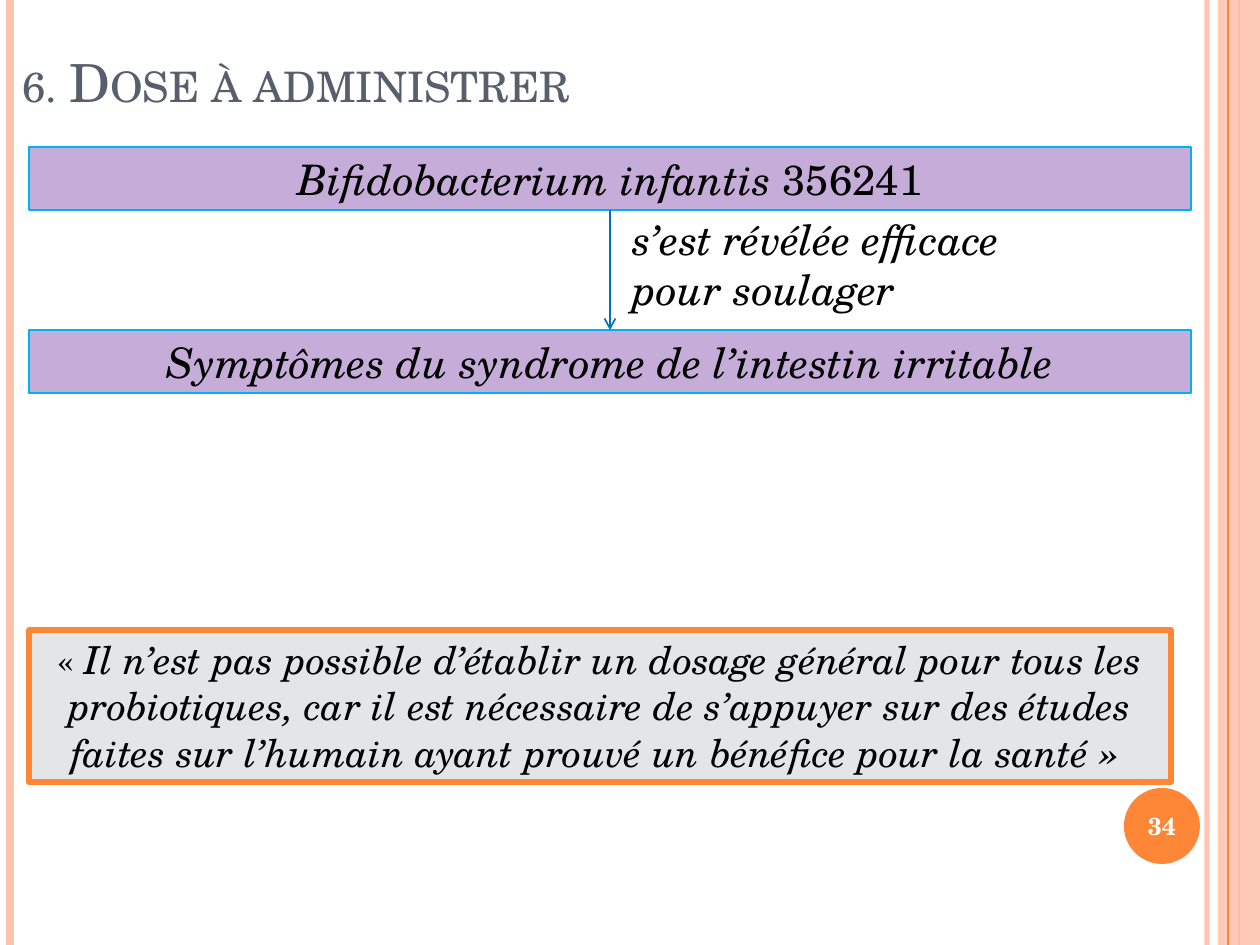
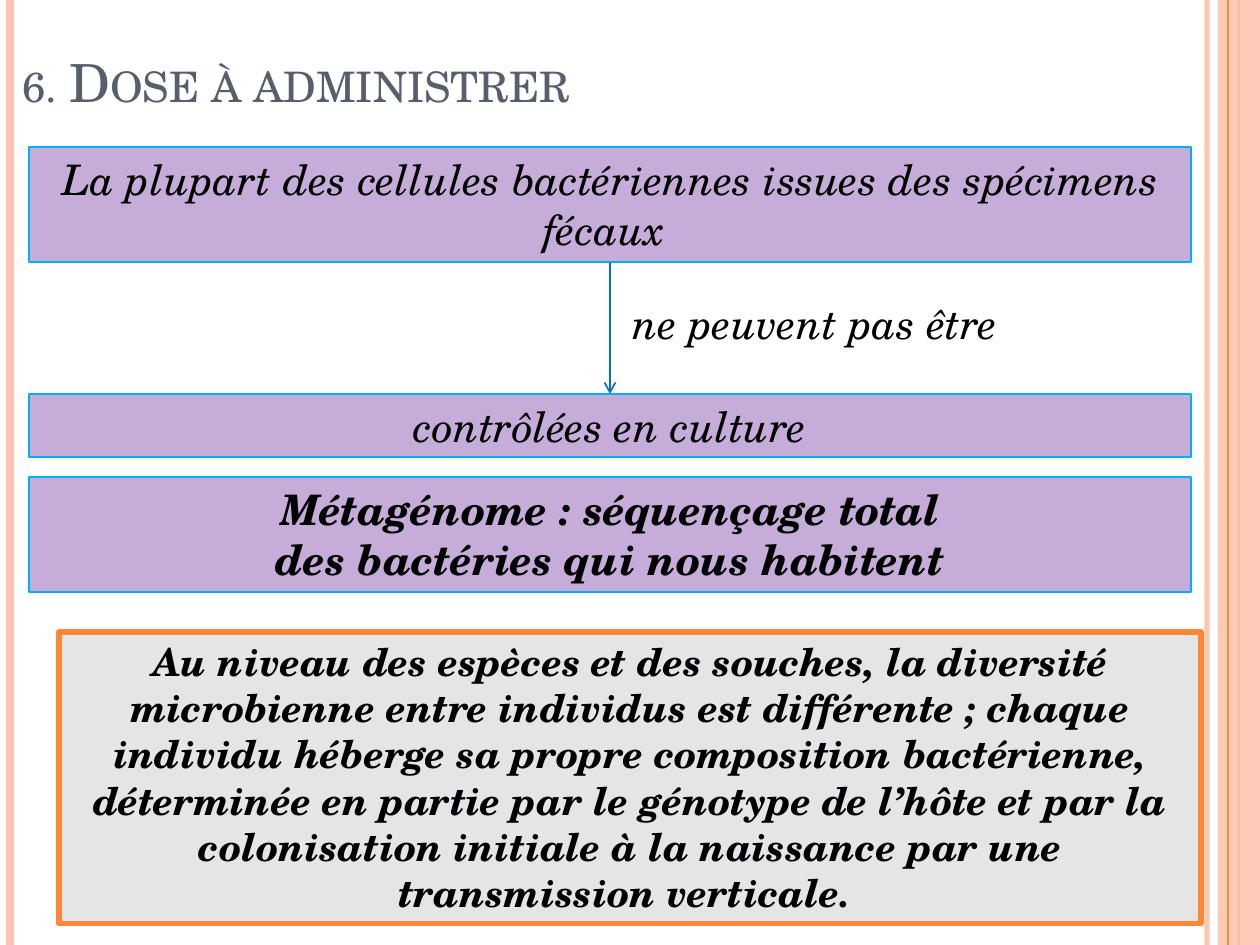
from lxml import etree
from pptx import Presentation
from pptx.dml.color import RGBColor
from pptx.enum.shapes import MSO_CONNECTOR, MSO_SHAPE
from pptx.enum.text import MSO_ANCHOR, MSO_AUTO_SIZE, PP_ALIGN
from pptx.oxml.ns import qn
from pptx.util import Emu, Pt

STRAIGHT = MSO_CONNECTOR.STRAIGHT
RECTANGLE, OVAL = MSO_SHAPE.RECTANGLE, MSO_SHAPE.OVAL
TOP, MIDDLE, BOTTOM = MSO_ANCHOR.TOP, MSO_ANCHOR.MIDDLE, MSO_ANCHOR.BOTTOM
LEFT, CENTER = PP_ALIGN.LEFT, PP_ALIGN.CENTER
GROW, FIXED = MSO_AUTO_SIZE.SHAPE_TO_FIT_TEXT, MSO_AUTO_SIZE.NONE

PX = 914400 / 126
WIDTH, HEIGHT = 1260, 945
FONT = "TeX Gyre Schola"
TITLE = "6. Dose à administrer"
COLORS = {
    "orange": "FE8637", "peach": "FEC3AE", "slate": "575F6D", "purple": "7030A0",
    "cyan": "00B0F0", "blue": "0070C0", "gray": "E4E5E6", "black": "000000",
    "white": "FFFFFF",
}
RULES = [(1207, "peach", 3, 93), (10, "peach", 4.5, 100), (1239, "orange", 1.5, 100)]
ONE_LINE, TWO_LINES = 63, 115
BAND_LEFT, BAND_WIDTH = 29, 1162
LABEL_LEFT, LABEL_WIDTH = 620, 433
QUOTE_WIDTH = 1142


def px(*lengths):
    """Turn pixel lengths into EMU."""
    return [Emu(round(length * PX)) for length in lengths]


def color(name):
    """Look up a palette colour."""
    return RGBColor.from_string(COLORS[name])


def set_opacity(shape, percent):
    """Make the first colour of a shape translucent."""
    node = next(shape.element.iter(qn("a:srgbClr")))
    etree.SubElement(node, qn("a:alpha")).set("val", str(percent * 1000))


def write(shape, paragraphs, size, ink="black", align=CENTER, anchor=TOP, fit=GROW):
    """Fill a shape with paragraphs of (text, style) runs; style holds b and i."""
    frame = shape.text_frame
    frame.word_wrap = True
    frame.auto_size = fit
    frame.vertical_anchor = anchor
    for index, runs in enumerate(paragraphs):
        paragraph = frame.add_paragraph() if index else frame.paragraphs[0]
        paragraph.alignment = align
        for text, style in runs:
            run = paragraph.add_run()
            run.text = text
            run.font.name = FONT
            run.font.size = Pt(size)
            run.font.color.rgb = color(ink)
            run.font.bold = "b" in style
            run.font.italic = "i" in style


def add_filled(slide, kind, box, fill, line=None, weight=0.75):
    """Add a flat filled shape, outlined when a line colour is given."""
    shape = slide.shapes.add_shape(kind, *px(*box))
    shape.shadow.inherit = False
    shape.fill.solid()
    shape.fill.fore_color.rgb = color(fill)
    if line:
        shape.line.color.rgb = color(line)
        shape.line.width = Pt(weight)
    else:
        shape.line.fill.background()
    return shape


def add_line(slide, start, end, ink, weight):
    """Add a flat straight connector."""
    connector = slide.shapes.add_connector(STRAIGHT, *px(*start, *end))
    connector.line.color.rgb = color(ink)
    connector.line.width = Pt(weight)
    etree.SubElement(connector.element.find(qn("p:spPr")), qn("a:effectLst"))
    return connector


def add_rule(slide, x, ink, weight, opacity=100):
    """Add a rule over the full slide height."""
    rule = add_line(slide, (x, 0), (x, HEIGHT), ink, weight)
    if opacity < 100:
        set_opacity(rule, opacity)


def add_frame(slide):
    """Draw the side rules, the right band and the page disc."""
    for rule in RULES:
        add_rule(slide, *rule)
    band = add_filled(slide, RECTANGLE, (1218, 0, WIDTH - 1218, HEIGHT), "peach")
    set_opacity(band, 87)
    add_rule(slide, 1228, "orange", 0.75)
    add_filled(slide, OVAL, (1124, 788, 76, 76), "orange")


def add_title(slide):
    """Place the small-caps title in its placeholder."""
    title = slide.shapes.title
    title.left, title.top, title.width, title.height = px(10, -39, 1029, 158)
    write(title, [[(TITLE, "")]], 30, "slate", LEFT, BOTTOM, FIXED)
    for properties in title.element.iter(qn("a:rPr")):
        properties.set("cap", "small")


def add_band(slide, top, height, paragraphs):
    """Add a purple statement band."""
    band = add_filled(slide, RECTANGLE, (BAND_LEFT, top, BAND_WIDTH, height),
                      "purple", "cyan")
    set_opacity(band, 40)
    write(band, paragraphs, 24)
    return band


def add_arrow(slide, upper, lower):
    """Join two bands with a downward arrow."""
    arrow = add_line(slide, (0, 0), (0, 0), "blue", 1)
    arrow.begin_connect(upper, 2)
    arrow.end_connect(lower, 0)
    outline = arrow.element.find(qn("p:spPr")).find(qn("a:ln"))
    etree.SubElement(outline, qn("a:tailEnd")).set("type", "arrow")


def add_label(slide, top, height, text):
    """Add the wording beside an arrow."""
    label = slide.shapes.add_textbox(*px(LABEL_LEFT, top, LABEL_WIDTH, height))
    write(label, [[(text, "i")]], 24, align=LEFT)


def add_quote(slide, left, top, height, runs):
    """Add the gray conclusion box."""
    quote = add_filled(slide, RECTANGLE, (left, top, QUOTE_WIDTH, height),
                       "gray", "orange", 3)
    write(quote, [runs], 22)


def add_page_number(slide, number):
    """Write the page number over the disc."""
    box = slide.shapes.add_textbox(*px(1120, 790, 84, 72))
    write(box, [[(number, "b")]], 14, "white", anchor=MIDDLE, fit=FIXED)


def start_slide(presentation):
    """Add a slide with the shared frame and title."""
    slide = presentation.slides.add_slide(presentation.slide_layouts[5])
    add_frame(slide)
    add_title(slide)
    return slide


def build_strain_slide(presentation):
    """Build the slide on the effective strain."""
    slide = start_slide(presentation)
    strain = add_band(slide, 147, ONE_LINE,
                      [[("Bifidobacterium infantis ", "i"), ("356241", "")]])
    symptoms = add_band(slide, 330, ONE_LINE,
                        [[("Symptômes du syndrome de l’intestin irritable", "i")]])
    add_arrow(slide, strain, symptoms)
    add_label(slide, 207, TWO_LINES, "s’est révélée efficace pour soulager")
    add_quote(slide, 29, 630, 152, [
        ("« ", ""),
        ("Il n’est pas possible d’établir un dosage général pour tous les "
         "probiotiques, car il est nécessaire de s’appuyer sur des études faites "
         "sur l’humain ayant prouvé un bénéfice pour la santé ", "i"),
        ("» ", "bi"),
    ])
    add_page_number(slide, "34")


def build_metagenome_slide(presentation):
    """Build the slide on the metagenome."""
    slide = start_slide(presentation)
    cells = add_band(slide, 147, TWO_LINES, [[
        ("La plupart des cellules bactériennes issues des spécimens fécaux ", "i")]])
    culture = add_band(slide, 394, ONE_LINE, [[("contrôlées en culture", "i")]])
    add_arrow(slide, cells, culture)
    add_label(slide, 291, ONE_LINE, "ne peuvent pas être")
    add_band(slide, 477, TWO_LINES, [[("Métagénome : séquençage total", "bi")],
                                     [("des bactéries qui nous habitent", "bi")]])
    add_quote(slide, 59, 632, 292, [
        ("Au niveau des espèces et des souches, la diversité microbienne entre "
         "individus est différente ; chaque individu héberge sa propre composition "
         "bactérienne, déterminée en partie par le génotype de l’hôte et par la "
         "colonisation initiale à la naissance par une transmission verticale. ",
         "bi"),
    ])


def main():
    """Build and save the presentation."""
    presentation = Presentation()
    presentation.slide_width, presentation.slide_height = px(WIDTH, HEIGHT)
    build_strain_slide(presentation)
    build_metagenome_slide(presentation)
    presentation.save("out.pptx")


if __name__ == "__main__":
    main()
